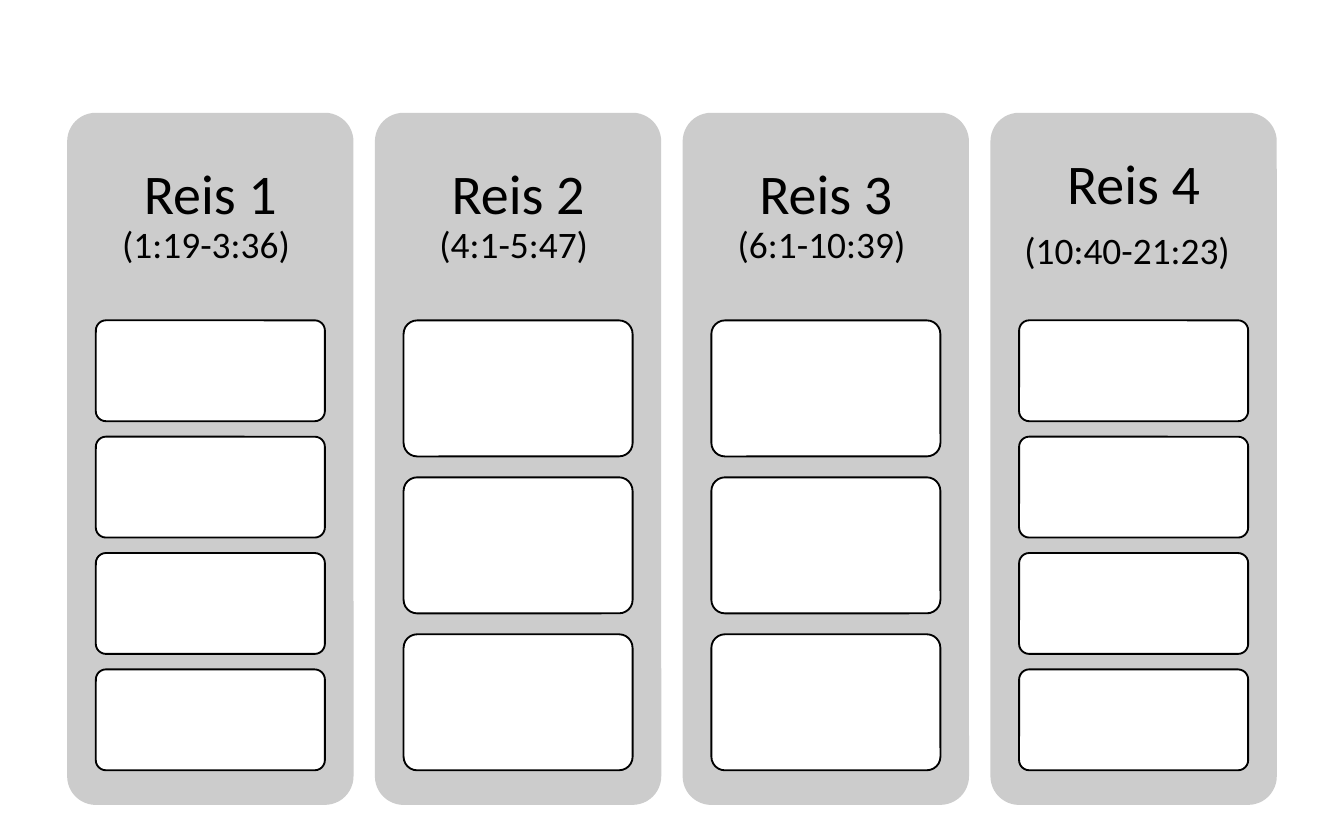
from pptx import Presentation
from pptx.dml.color import RGBColor
from pptx.enum.shapes import MSO_SHAPE
from pptx.enum.text import MSO_ANCHOR, PP_ALIGN
from pptx.util import Pt

ROUNDED = MSO_SHAPE.ROUNDED_RECTANGLE
MIDDLE = MSO_ANCHOR.MIDDLE
CENTER = PP_ALIGN.CENTER

FONT = "Calibri"
BLACK, WHITE, GREY = "000000", "FFFFFF", "CCCCCC"

# Title, verse spans with their sizes, number of stages
JOURNEYS = [
    ("Reis 1", [("(1:19-3:36) ", 20)], 4),
    ("Reis 2", [("(4:1-5:47) ", 20)], 3),
    ("Reis 3", [("(6:1-10:39) ", 20)], 3),
    ("Reis 4", [("(10:40-21:23)", 20), (" ", 30)], 4),
]

LEFT, TOP, WIDTH, HEIGHT = 36, 60.4, 153.4, 370.8
COLUMN_PITCH = 164.87
HEADER_SHARE, STAGES_SHARE, STAGE_WIDTH_SHARE = 0.3, 0.65, 0.8
GAP_TO_STAGE = 2 / 13


def color(value):
    return RGBColor.from_string(value)


def add_panel(shapes, left, top, width, height, fill, line=None):
    panel = shapes.add_shape(ROUNDED, Pt(left), Pt(top), Pt(width), Pt(height))
    panel.adjustments[0] = 0.1
    panel.shadow.inherit = False
    panel.fill.solid()
    panel.fill.fore_color.rgb = color(fill)
    if line:
        panel.line.color.rgb = color(line)
        panel.line.width = Pt(1)
    else:
        panel.line.fill.background()


def add_span(para, text, size):
    span = para.add_run()
    span.text = text
    span.font.name = FONT
    span.font.size = Pt(size)
    span.font.color.rgb = color(BLACK)


def add_header(shapes, left, top, width, height, title, verses):
    box = shapes.add_textbox(Pt(left), Pt(top), Pt(width), Pt(height))
    frame = box.text_frame
    frame.word_wrap = True
    frame.vertical_anchor = MIDDLE
    frame.margin_left = frame.margin_right = Pt(8.4)
    frame.margin_top = frame.margin_bottom = Pt(8.4)
    para = frame.paragraphs[0]
    para.alignment = CENTER
    para.line_spacing = 0.9
    add_span(para, title, 30)
    para.add_line_break()
    for text, size in verses:
        add_span(para, text, size)


def add_stages(shapes, left, top, width, height, count):
    """Stack equal boxes that fill the given height, gaps included."""
    stage_height = height / (count + (count - 1) * GAP_TO_STAGE)
    pitch = stage_height * (1 + GAP_TO_STAGE)
    for row in range(count):
        add_panel(shapes, left, top + row * pitch, width, stage_height, WHITE, BLACK)


def add_journey(shapes, left, top, width, height, title, verses, count):
    header_height = height * HEADER_SHARE
    stage_width = width * STAGE_WIDTH_SHARE
    add_panel(shapes, left, top, width, height, GREY)
    add_header(shapes, left, top, width, header_height, title, verses)
    add_stages(shapes, left + (width - stage_width) / 2, top + header_height,
               stage_width, height * STAGES_SHARE, count)


def main():
    deck = Presentation()
    deck.slide_width, deck.slide_height = Pt(720), Pt(450)
    page = deck.slides.add_slide(deck.slide_layouts[6])
    group = page.shapes.add_group_shape()
    for column, (title, verses, count) in enumerate(JOURNEYS):
        add_journey(group.shapes, LEFT + column * COLUMN_PITCH, TOP,
                    WIDTH, HEIGHT, title, verses, count)
    deck.save("out.pptx")


if __name__ == "__main__":
    main()
